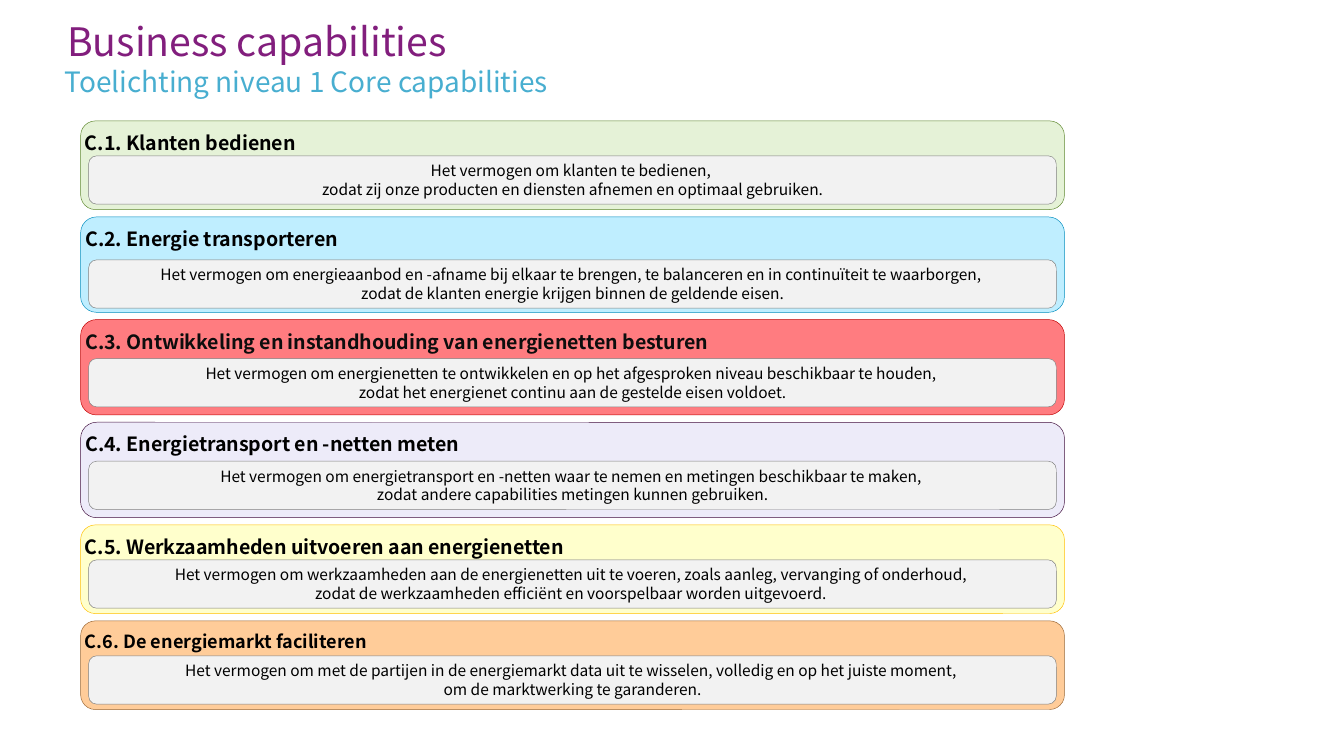
from dataclasses import dataclass

from pptx import Presentation
from pptx.dml.color import RGBColor
from pptx.enum import shapes, text
from pptx.util import Inches, Pt

FONT = "Noto Sans CJK TC"
COLOURS = {
    "title": "821E7D",
    "subtitle": "48AED0",
    "text": "000000",
    "dark": "0D0D0D",
    "note": "F2F2F2",
    "note_line": "808080",
}
BAND_LEFT, BAND_WIDTH = 0.6, 7.32
BANDS_TOP, BANDS_BOTTOM = 0.9, 5.28
NOTE_LEFT, NOTE_WIDTH, NOTE_HEIGHT = 0.66, 7.2, 0.36


@dataclass
class Capability:
    heading: str
    note: str
    fill: str
    line: str
    height: float
    note_offset: float
    size: float = 10.5
    colour: str = "text"


CAPABILITIES = [
    Capability(
        "C.1. Klanten bedienen",
        "Het vermogen om klanten te bedienen, \n"
        "zodat zij onze producten en diensten afnemen en optimaal gebruiken.",
        "E5F2D7", "5E872D", 0.66, 0.26),
    Capability(
        "C.2. Energie transporteren",
        "Het vermogen om energieaanbod en -afname bij elkaar te brengen, "
        "te balanceren en in continuïteit te waarborgen, \n"
        "zodat de klanten energie krijgen binnen de geldende eisen.",
        "BFEEFF", "008CBE", 0.71, 0.32),
    Capability(
        "C.3. Ontwikkeling en instandhouding van energienetten besturen",
        "Het vermogen om energienetten te ontwikkelen en op het afgesproken "
        "niveau beschikbaar te houden, \n"
        "zodat het energienet continu aan de gestelde eisen voldoet.",
        "FF7C80", "C00000", 0.71, 0.29, colour="dark"),
    Capability(
        "C.4. Energietransport en -netten meten",
        "Het vermogen om energietransport en -netten waar te nemen en "
        "metingen beschikbaar te maken, \n"
        "zodat andere capabilities metingen kunnen gebruiken.",
        "EDEBF9", "410F3E", 0.71, 0.29),
    Capability(
        "C.5. Werkzaamheden uitvoeren aan energienetten",
        "Het vermogen om werkzaamheden aan de energienetten uit te voeren, "
        "zoals aanleg, vervanging of onderhoud, \n"
        "zodat de werkzaamheden efficiënt en voorspelbaar worden uitgevoerd. ",
        "FFFFCC", "FFC000", 0.66, 0.26),
    Capability(
        "C.6. De energiemarkt faciliteren",
        "Het vermogen om met de partijen in de energiemarkt data uit te "
        "wisselen, volledig en op het juiste moment, \n"
        "om de marktwerking te garanderen.",
        "FFCC99", "996633", 0.66, 0.26, size=9.7),
]


def set_text(frame, content: str, size: float, colour: str, align, anchor,
             bold: bool = False, margins=None, spacing=None) -> None:
    """Fill a text frame; margins are left, top, right, bottom in inches."""
    frame.text = content
    frame.word_wrap = True
    frame.auto_size = text.MSO_AUTO_SIZE.NONE
    frame.vertical_anchor = anchor
    if margins:
        (frame.margin_left, frame.margin_top,
         frame.margin_right, frame.margin_bottom) = map(Inches, margins)
    for para in frame.paragraphs:
        para.alignment = align
        para.space_before = Pt(0)
        if spacing:
            para.line_spacing = spacing
        for span in para.runs:
            span.font.name = FONT
            span.font.size = Pt(size)
            span.font.bold = bold
            span.font.color.rgb = RGBColor.from_string(COLOURS[colour])


def add_panel(page, left: float, top: float, width: float, height: float,
              fill: str, line: str):
    panel = page.shapes.add_shape(
        shapes.MSO_SHAPE.ROUNDED_RECTANGLE,
        Inches(left), Inches(top), Inches(width), Inches(height))
    panel.shadow.inherit = False
    panel.fill.solid()
    panel.fill.fore_color.rgb = RGBColor.from_string(fill)
    panel.line.color.rgb = RGBColor.from_string(line)
    panel.line.width = Pt(0.25)
    return panel


def add_capability(page, capability: Capability, top: float) -> None:
    band = add_panel(page, BAND_LEFT, top, BAND_WIDTH, capability.height,
                     capability.fill, capability.line)
    set_text(band.text_frame, capability.heading, capability.size,
             capability.colour, text.PP_ALIGN.LEFT, text.MSO_ANCHOR.TOP,
             bold=True, margins=(0, 0.04, 0, 0.04))
    note = add_panel(page, NOTE_LEFT, top + capability.note_offset, NOTE_WIDTH,
                     NOTE_HEIGHT, COLOURS["note"], COLOURS["note_line"])
    set_text(note.text_frame, capability.note, 8.3, "text",
             text.PP_ALIGN.CENTER, text.MSO_ANCHOR.MIDDLE)


def add_headings(page) -> None:
    title = page.shapes.title
    title.left, title.top = Inches(0.5), Inches(0.09)
    title.width, title.height = Inches(7.28), Inches(0.39)
    set_text(title.text_frame, "Business capabilities", 21, "title",
             text.PP_ALIGN.LEFT, text.MSO_ANCHOR.TOP,
             margins=(0, 0, 0, 0), spacing=Pt(28))
    subtitle = page.shapes.add_textbox(
        Inches(0.48), Inches(0.43), Inches(7.55), Inches(0.22))
    set_text(subtitle.text_frame, "Toelichting niveau 1 Core capabilities", 15,
             "subtitle", text.PP_ALIGN.LEFT, text.MSO_ANCHOR.TOP,
             margins=(0, 0, 0, 0), spacing=1.2)


def main() -> None:
    deck = Presentation()
    deck.slide_width = Inches(10)
    deck.slide_height = Inches(10 * 9 / 16)
    page = deck.slides.add_slide(deck.slide_layouts[5])
    add_headings(page)

    free = BANDS_BOTTOM - BANDS_TOP - sum(c.height for c in CAPABILITIES)
    gap = free / (len(CAPABILITIES) - 1)
    top = BANDS_TOP
    for capability in CAPABILITIES:
        add_capability(page, capability, top)
        top += capability.height + gap
    deck.save("out.pptx")


if __name__ == "__main__":
    main()
